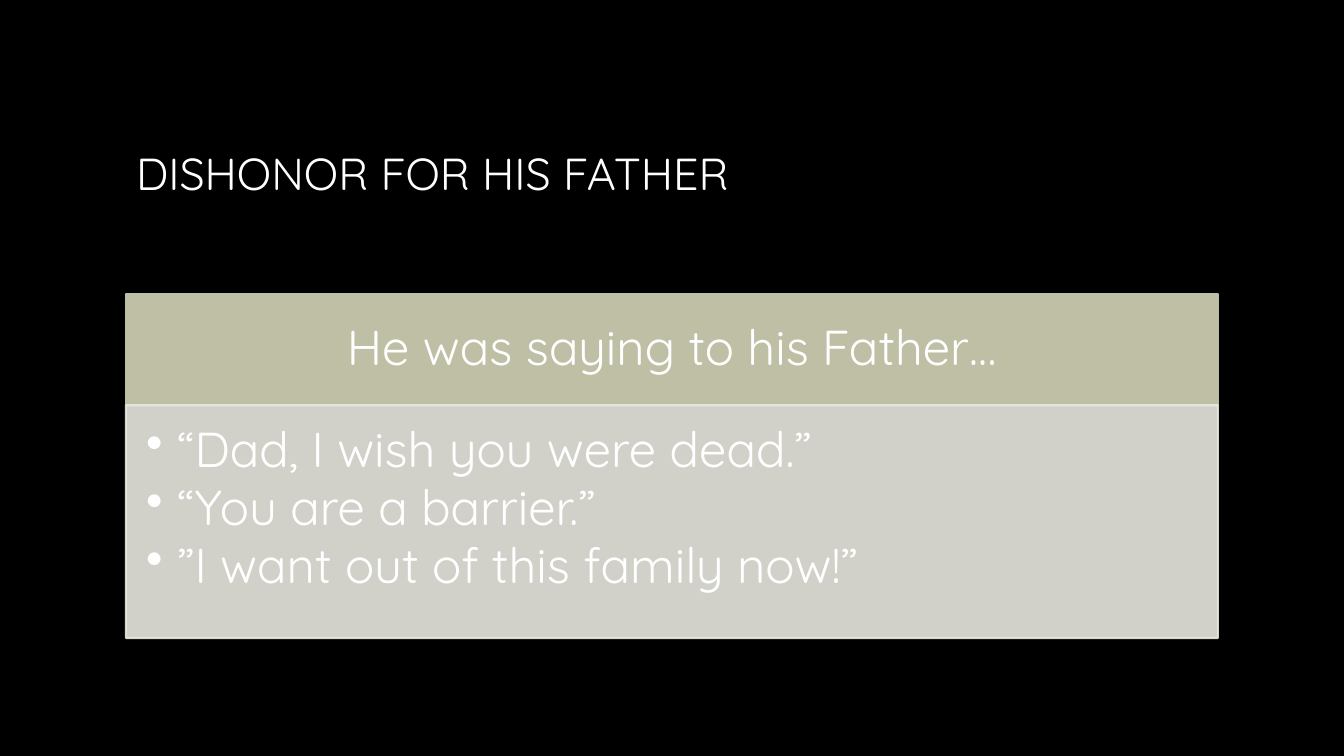
from lxml import etree
from pptx import Presentation
from pptx.dml.color import RGBColor
from pptx.enum import shapes, text
from pptx.oxml import ns
from pptx.util import Inches, Pt

TITLE = "DISHONOR FOR HIS FATHER"
HEADING = ["He was saying to his Father…"]
SAYINGS = [
    "“Dad, I wish you were dead.”",
    "“You are a barrier.”",
    "”I want out of this family now!”",
]
FONT = "Quicksand"
LEFT, WIDTH = 1.25, 10.83
TITLE_TOP, TITLE_HEIGHT = 0.67, 2.08
PANELS_TOP = 2.92
BULLET_INDENT = 0.31
PANELS = [
    dict(lines=HEADING, height=1.1, color="BFBFA5", opacity=100, bullets=False,
         insets=(0.27, 0.16, 0.27, 0.16), anchor=text.MSO_ANCHOR.MIDDLE,
         paragraph=dict(alignment=text.PP_ALIGN.CENTER, line_spacing=0.9)),
    dict(lines=SAYINGS, height=2.31, color="E8E8E1", opacity=90, bullets=True,
         insets=(0.2, 0.2, 0.27, 0.31), anchor=text.MSO_ANCHOR.TOP,
         paragraph=dict(alignment=text.PP_ALIGN.LEFT, line_spacing=0.9,
                        space_after=Pt(3.5), level=1)),
]


def rgb(value):
    return RGBColor.from_string(value)


def apply(target, values):
    for name, value in values.items():
        setattr(target, name, value)


def write(paragraph, words, size):
    run = paragraph.add_run()
    run.text = words
    apply(run.font, dict(name=FONT, size=Pt(size), bold=False))
    run.font.color.rgb = rgb("FFFFFF")


def add_bullet(paragraph):
    properties = paragraph._p.get_or_add_pPr()
    indent = Inches(BULLET_INDENT)
    properties.set("marL", str(indent))
    properties.set("indent", str(-indent))
    etree.SubElement(properties, ns.qn("a:buChar"), char="•")


def add_panel(slide, top, panel):
    box = slide.shapes.add_shape(
        shapes.MSO_SHAPE.RECTANGLE, Inches(LEFT), Inches(top),
        Inches(WIDTH), Inches(panel["height"]))
    box.shadow.inherit = False
    box.fill.solid()
    box.fill.fore_color.rgb = rgb(panel["color"])
    box.line.color.rgb = rgb(panel["color"])
    box.line.width = Pt(1.5)
    if panel["opacity"] < 100:
        for color in box._element.spPr.iter(ns.qn("a:srgbClr")):
            etree.SubElement(color, ns.qn("a:alpha"), val=str(panel["opacity"] * 1000))

    frame = box.text_frame
    sides = ("margin_left", "margin_top", "margin_right", "margin_bottom")
    apply(frame, dict(zip(sides, map(Inches, panel["insets"]))))
    apply(frame, dict(word_wrap=True, vertical_anchor=panel["anchor"]))
    for index, words in enumerate(panel["lines"]):
        paragraph = frame.add_paragraph() if index else frame.paragraphs[0]
        apply(paragraph, panel["paragraph"])
        if panel["bullets"]:
            add_bullet(paragraph)
        write(paragraph, words, 35)


def main():
    deck = Presentation()
    apply(deck, dict(slide_width=Inches(13.33), slide_height=Inches(7.5)))
    slide = deck.slides.add_slide(deck.slide_layouts[5])
    slide.background.fill.solid()
    slide.background.fill.fore_color.rgb = rgb("000000")

    title = slide.shapes.title
    apply(title, dict(left=Inches(LEFT), top=Inches(TITLE_TOP),
                      width=Inches(WIDTH), height=Inches(TITLE_HEIGHT)))
    apply(title.text_frame, dict(word_wrap=True, vertical_anchor=text.MSO_ANCHOR.MIDDLE))
    heading = title.text_frame.paragraphs[0]
    heading.alignment = text.PP_ALIGN.LEFT
    write(heading, TITLE, 32)

    top = PANELS_TOP
    for panel in PANELS:
        add_panel(slide, top, panel)
        top += panel["height"]
    deck.save("out.pptx")


if __name__ == "__main__":
    main()
